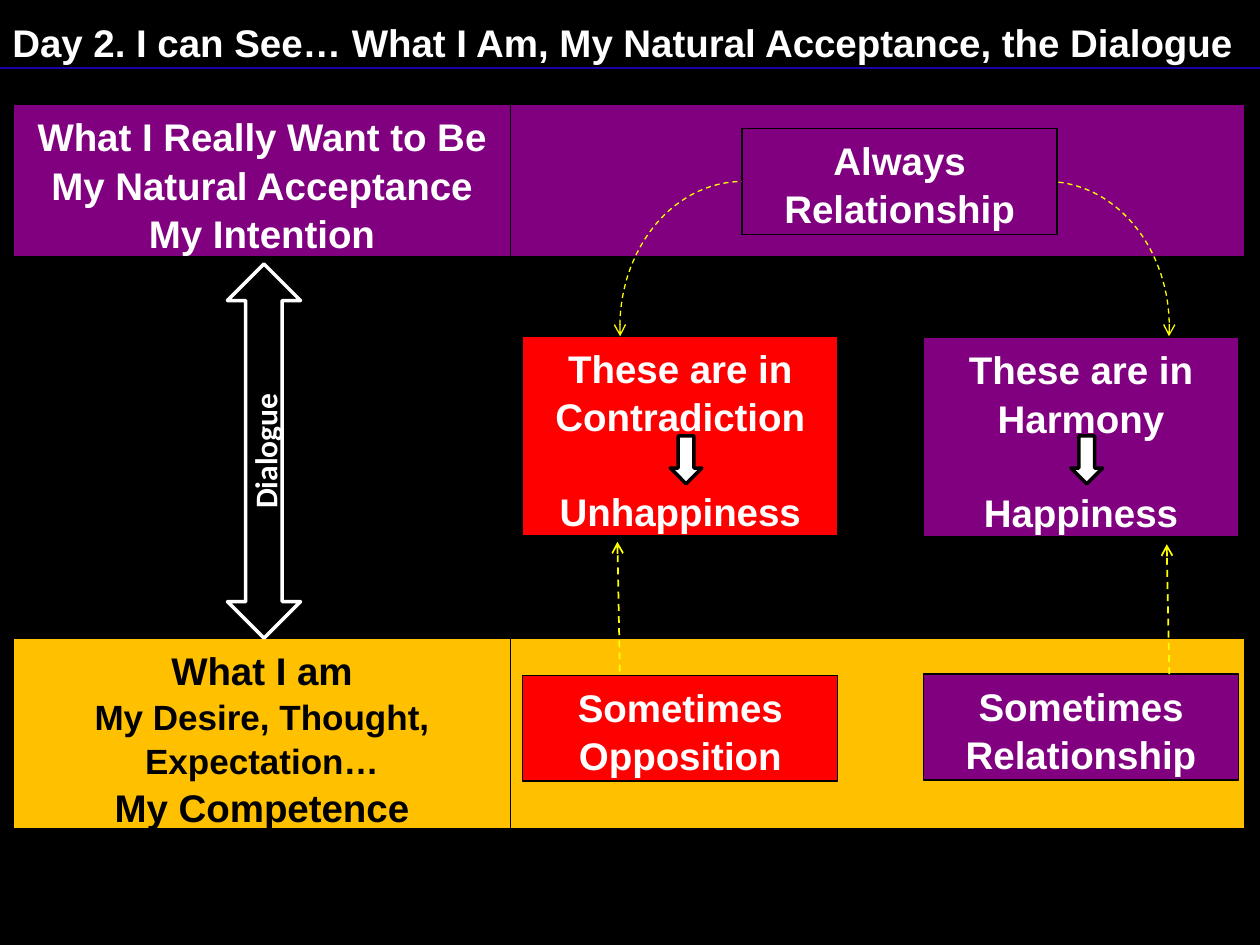
from lxml import etree
from pptx import Presentation
from pptx.dml.color import RGBColor
from pptx.enum.dml import MSO_LINE
from pptx.enum.shapes import MSO_CONNECTOR, MSO_SHAPE
from pptx.enum.text import MSO_ANCHOR, PP_ALIGN
from pptx.oxml.ns import qn
from pptx.util import Inches, Pt

COLORS = {
    "black": "000000", "white": "FFFFFF", "purple": "800080", "gold": "FFC000",
    "red": "FF0000", "yellow": "FFFF00", "navy": "1E00AA",
}
TITLE = "Day 2. I can See… What I Am, My Natural Acceptance, the Dialogue"
LINE_SPACING = 1.05
LINE_HEIGHT = Pt(26.5)

# top, height, fill, text colour, (text, size) lines
BANDS = [
    (5.07, 1.51, "gold", "black", [
        ("What I am", 22), ("My Desire, Thought, Expectation…", 20), ("My Competence", 22)]),
    (0.83, 1.21, "purple", "white", [
        ("What I Really Want to Be", 22), ("My Natural Acceptance", 22), ("My Intention", 22)]),
]
BAND_LEFT, BAND_WIDTH, LABEL_WIDTH = 0.11, 9.77, 3.94

# left, top, fill, lines
BOX_WIDTH, BOX_HEIGHT = 2.5, 0.84
RELATION_BOXES = [
    (5.89, 1.02, "purple", ["Always", "Relationship"]),
    (7.33, 5.35, "purple", ["Sometimes", "Relationship"]),
    (4.15, 5.36, "red", ["Sometimes", "Opposition"]),
]
# left, top, fill, state, outcome
OUTCOME_HEIGHT = 1.58
OUTCOMES = [
    (7.33, 2.68, "purple", "These are in Harmony", "Happiness"),
    (4.15, 2.67, "red", "These are in Contradiction", "Unhappiness"),
]
# left, start and end angle in degrees, end that carries the arrowhead
ARCS = [(7.33, 274.75, 4.33, "tailEnd"), (4.92, 175.66, 269.58, "headEnd")]
# start and end of each rising arrow
RISING_ARROWS = [((9.28, 5.35), (9.26, 4.32)), ((4.92, 5.33), (4.9, 4.3))]


def color(name):
    return RGBColor.from_string(COLORS[name])


def add_shape(page, kind, left, top, width, height, fill=None, line="black", weight=0.75):
    shape = page.shapes.add_shape(
        kind, Inches(left), Inches(top), Inches(width), Inches(height))
    shape.shadow.inherit = False
    if fill:
        shape.fill.solid()
        shape.fill.fore_color.rgb = color(fill)
    else:
        shape.fill.background()
    shape.line.color.rgb = color(line)
    shape.line.width = Pt(weight)
    return shape


def add_line(page, start, end, line, weight):
    connector = page.shapes.add_connector(
        MSO_CONNECTOR.STRAIGHT, *(Inches(value) for value in (*start, *end)))
    etree.SubElement(connector._element.spPr, qn("a:effectLst"))
    connector.line.color.rgb = color(line)
    connector.line.width = Pt(weight)
    return connector


def dash_with_arrowhead(shape, end):
    shape.line.dash_style = MSO_LINE.DASH
    outline = shape._element.spPr.find(qn("a:ln"))
    etree.SubElement(outline, qn(f"a:{end}"), type="arrow")


def write(shape, lines, text_color="white", font="Arial", align=PP_ALIGN.CENTER,
          anchor=MSO_ANCHOR.TOP):
    """Put one paragraph in the shape for each (text, size) pair."""
    frame = shape.text_frame
    frame.word_wrap = True
    frame.vertical_anchor = anchor
    for index, (text, size) in enumerate(lines):
        para = frame.add_paragraph() if index else frame.paragraphs[0]
        para.alignment = align
        para.line_spacing = LINE_SPACING
        span = para.add_run()
        span.text = text
        span.font.name = font
        span.font.size = Pt(size)
        span.font.bold = True
        span.font.color.rgb = color(text_color)
    return frame


def main():
    deck = Presentation()
    deck.slide_width, deck.slide_height = Inches(10), Inches(7.5)
    page = deck.slides.add_slide(deck.slide_layouts[6])
    page.background.fill.solid()
    page.background.fill.fore_color.rgb = color("black")

    add_line(page, (0, 0.54), (10, 0.54), "navy", 0.75)
    title = page.shapes.add_textbox(0, Inches(0.08), Inches(10), Inches(0.42))
    write(title, [(TITLE, 22)], align=PP_ALIGN.LEFT)

    for top, height, fill, text_color, lines in BANDS:
        add_shape(page, MSO_SHAPE.RECTANGLE, BAND_LEFT, top, BAND_WIDTH, height, fill)
        label = add_shape(page, MSO_SHAPE.RECTANGLE, BAND_LEFT, top, LABEL_WIDTH, height, fill)
        write(label, lines, text_color)

    dialogue = add_shape(page, MSO_SHAPE.LEFT_RIGHT_ARROW, 0.61, 3.29, 2.97, 0.58,
                         line="white", weight=2)
    dialogue.rotation = 270
    write(dialogue, [("Dialogue", 18)], font="Calibri", anchor=MSO_ANCHOR.MIDDLE)

    for left, top, fill, lines in RELATION_BOXES:
        box = add_shape(page, MSO_SHAPE.RECTANGLE, left, top, BOX_WIDTH, BOX_HEIGHT, fill)
        write(box, [(text, 22) for text in lines])

    for left, top, fill, state, outcome in OUTCOMES:
        box = add_shape(page, MSO_SHAPE.RECTANGLE, left, top, BOX_WIDTH, OUTCOME_HEIGHT, fill)
        frame = write(box, [(state, 22), (outcome, 22)])
        frame.paragraphs[1].space_before = LINE_HEIGHT
        add_shape(page, MSO_SHAPE.DOWN_ARROW, left + 1.17, 3.46, 0.25, 0.38, "white", weight=2)

    for left, start, end, head in ARCS:
        arc = add_shape(page, MSO_SHAPE.ARC, left, 1.44, 1.95, 2.31, line="yellow")
        # Angles are stored in 60000ths of a degree, adjustments in 100000ths.
        arc.adjustments[0], arc.adjustments[1] = start * 0.6, end * 0.6
        dash_with_arrowhead(arc, head)

    for start, end in RISING_ARROWS:
        dash_with_arrowhead(add_line(page, start, end, "yellow", 1), "tailEnd")

    deck.save("out.pptx")


if __name__ == "__main__":
    main()
